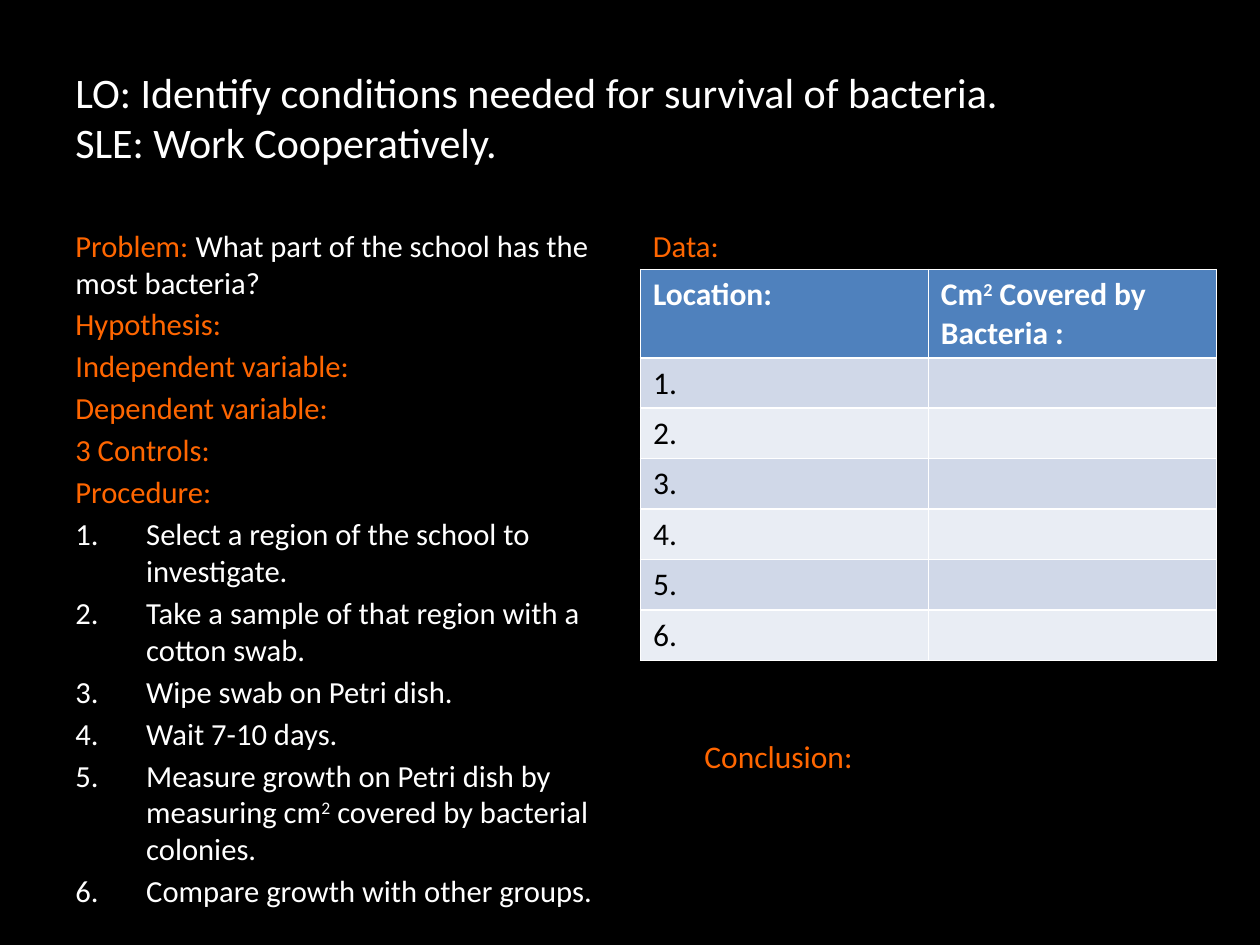
from dataclasses import dataclass

from lxml import etree
from pptx import Presentation
from pptx import util as u
from pptx.dml import color as c
from pptx.enum import text as t
from pptx.oxml import ns
from pptx.slide import Slide

BLACK = c.RGBColor(0x00, 0x00, 0x00)
WHITE = c.RGBColor(0xFF, 0xFF, 0xFF)
ORANGE = c.RGBColor(0xFF, 0x66, 0x00)
BLUE = c.RGBColor(0x4F, 0x81, 0xBD)
BANDS = (c.RGBColor(0xD0, 0xD8, 0xE8), c.RGBColor(0xE9, 0xED, 0xF4))

QUESTION = "What part of the school has the most bacteria?"
HEADINGS = ["Hypothesis:", "Independent variable:", "Dependent variable:",
            "3 Controls:", "Procedure:"]
STEPS = [
    "Select a region of the school to investigate.",
    "Take a sample of that region with a cotton swab.",
    "Wipe swab on Petri dish.",
    "Wait 7-10 days.",
    "Measure growth on Petri dish by measuring cm^2^ covered by bacterial colonies.",
    "Compare growth with other groups.",
]
TABLE_ROWS = [("Location:", "Cm^2^ Covered by Bacteria :")]
TABLE_ROWS += [(f"{number}.", "") for number in range(1, 7)]


def write(para, text, font="Calibri", size=18, color=WHITE, bold=False):
    for index, part in enumerate(text.split("^")):
        span = para.add_run()
        span.text = part
        span.font.name = font
        span.font.size = u.Pt(size)
        span.font.color.rgb = color
        span.font.bold = bold
        if index % 2:
            span.font._element.set("baseline", "30000")


@dataclass
class Sheet:
    page: Slide
    font: str = "Calibri"
    body_size: float = 17.5
    gap: float = 3
    indent: float = 40.5

    def box(self, left, top, width, height, anchor=t.MSO_ANCHOR.TOP, wrap=True):
        frame = self.page.shapes.add_textbox(
            *map(u.Pt, (left, top, width, height))).text_frame
        frame.word_wrap = wrap
        frame.vertical_anchor = anchor
        return frame

    def title(self, lines, *place):
        para = self.box(*place, anchor=t.MSO_ANCHOR.MIDDLE).paragraphs[0]
        for index, line in enumerate(lines):
            if index:
                para.add_line_break()
            write(para, line, font=self.font, size=24)

    def body(self, paragraphs, *place):
        frame = self.box(*place)
        for index, (spans, numbered) in enumerate(paragraphs):
            para = frame.add_paragraph() if index else frame.paragraphs[0]
            para.space_before = u.Pt(self.gap)
            if numbered:
                self.number(para)
            for text, color in spans:
                write(para, text, font=self.font, size=self.body_size, color=color)

    def number(self, para):
        props = para._p.get_or_add_pPr()
        props.set("marL", str(u.Pt(self.indent)))
        props.set("indent", str(-u.Pt(self.indent)))
        bullet = etree.SubElement(props, ns.qn("a:buAutoNum"))
        bullet.set("type", "arabicPeriod")

    def label(self, text, *place):
        frame = self.box(*place, wrap=False)
        frame.auto_size = t.MSO_AUTO_SIZE.SHAPE_TO_FIT_TEXT
        write(frame.paragraphs[0], text, font=self.font, color=ORANGE)

    def table(self, rows, left, top, width, height, header_height, row_height):
        holder = self.page.shapes.add_table(
            len(rows), len(rows[0]), *map(u.Pt, (left, top, width, height)))
        for index, values in enumerate(rows):
            header = index == 0
            holder.table.rows[index].height = u.Pt(header_height if header else row_height)
            for column, value in enumerate(values):
                cell = holder.table.cell(index, column)
                cell.fill.solid()
                cell.fill.fore_color.rgb = BLUE if header else BANDS[(index - 1) % 2]
                if value:
                    write(cell.text_frame.paragraphs[0], value, font=self.font,
                          color=WHITE if header else BLACK, bold=header)
        holder.height = u.Pt(height)


def main():
    deck = Presentation()
    deck.slide_width, deck.slide_height = u.Pt(720), u.Pt(540)
    page = deck.slides.add_slide(deck.slide_layouts[6])
    page.background.fill.solid()
    page.background.fill.fore_color.rgb = BLACK
    sheet = Sheet(page)

    sheet.title(["LO: Identify conditions needed for survival of bacteria. ",
                 "SLE: Work Cooperatively."], 36, 21.6, 648, 90)
    plan = [([("Problem: ", ORANGE), (QUESTION, WHITE)], False)]
    plan += [([(heading, ORANGE)], False) for heading in HEADINGS]
    plan += [([(step, WHITE)], True) for step in STEPS]
    sheet.body(plan, 36, 126, 318, 356.4)
    sheet.body([([("Data:", ORANGE)], False)], 366, 126, 318, 356.4)
    sheet.table(TABLE_ROWS, 366, 154, 329, 223.2, header_height=39.6, row_height=22.3)
    sheet.label("Conclusion:", 395.5, 417.6, 100, 29)

    deck.save("out.pptx")


if __name__ == "__main__":
    main()
